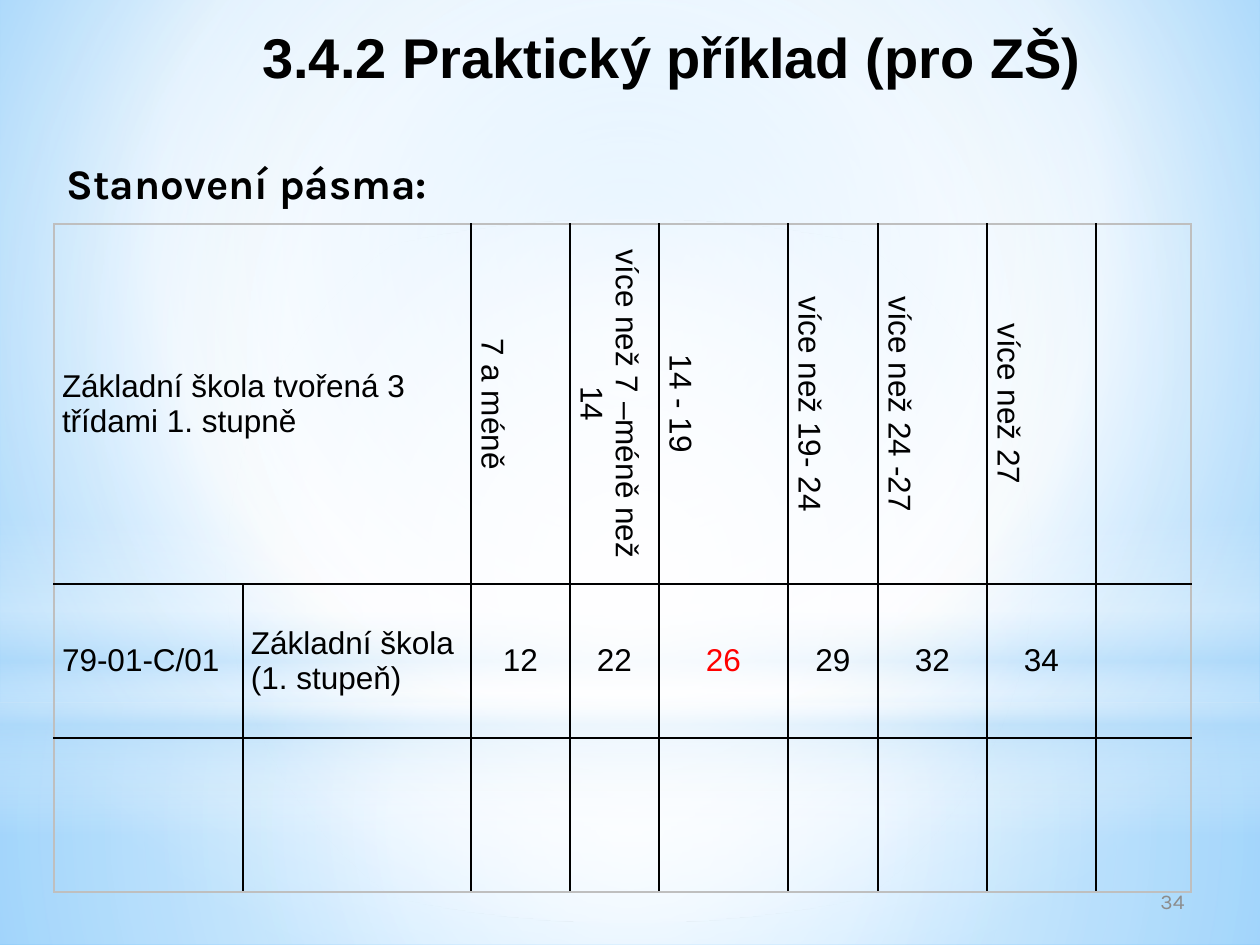
import pptx
import pptx.util
import pptx.oxml
import pptx.oxml.ns
import pptx.dml.color
import pptx.enum.shapes
import pptx.enum.text

PX = 914400 // 126
RGB = pptx.dml.color.RGBColor
BLACK = RGB(0, 0, 0)
RED = RGB(0xFF, 0, 0)
GRAY = RGB(0x8C, 0x8C, 0x8C)
EDGE = RGB(0xBF, 0xBF, 0xBF)
WHITE = RGB(0xFF, 0xFF, 0xFF)
PALE = RGB(0xB4, 0xDC, 0xFA)
SKY = RGB(0x9E, 0xD5, 0xFF)
BLUE = RGB(0x5B, 0xB9, 0xFF)
NS = pptx.oxml.ns.nsdecls("a")
ALIGN = pptx.enum.text.PP_ALIGN
ANCHOR = pptx.enum.text.MSO_ANCHOR
SHAPE = pptx.enum.shapes.MSO_SHAPE


def write(tf, text, size=18, font="Arial", color=BLACK, bold=False, align=ALIGN.LEFT):
    p = tf.paragraphs[0]
    p.alignment = align
    p.space_before = pptx.util.Pt(0)
    r = p.add_run()
    r.text = text
    r.font.size = pptx.util.Pt(size)
    r.font.name = font
    r.font.bold = bold
    r.font.color.rgb = color
    return p


def set_gradient(fill, parent, stops, center=None):
    fill.solid()
    gs = "".join(
        f'<a:gs pos="{pos * 1000}"><a:srgbClr val="{color}">'
        f'<a:alpha val="{alpha * 1000}"/></a:srgbClr></a:gs>'
        for pos, color, alpha in stops)
    shade = '<a:lin ang="5400000" scaled="0"/>'
    if center:
        rect = " ".join(f'{k}="{v * 1000}"' for k, v in zip("ltrb", center))
        shade = f'<a:path path="circle"><a:fillToRect {rect}/></a:path>'
    grad = pptx.oxml.parse_xml(
        f'<a:gradFill {NS} rotWithShape="1"><a:gsLst>{gs}</a:gsLst>{shade}</a:gradFill>')
    solid = parent.xpath(".//a:solidFill")[0]
    solid.getparent().replace(solid, grad)


prs = pptx.Presentation()
prs.slide_width = pptx.util.Inches(10)
prs.slide_height = pptx.util.Inches(7.5)
s = prs.slides.add_slide(prs.slide_layouts[1])
title, body = s.shapes.title, s.placeholders[1]

set_gradient(s.background.fill, s.element,
             [(0, SKY, 100), (60, WHITE, 100), (100, BLUE, 100)], (20, 10, 20, 60))

MIDDLE = (50, 50, 50, 50)
layers = [
    (SHAPE.RECTANGLE, 703, 242, [(0, WHITE, 91), (37, WHITE, 76), (100, PALE, 79)], MIDDLE),
    (SHAPE.RECTANGLE, 0, 703, [(0, WHITE, 89), (48, WHITE, 62), (100, PALE, 79)], MIDDLE),
    (SHAPE.RECTANGLE, 519, 315, [(0, WHITE, 0), (29, WHITE, 30), (45, PALE, 40),
                                 (55, WHITE, 26), (65, PALE, 60), (100, WHITE, 0)], None),
    (SHAPE.OVAL, 220, 703, [(0, WHITE, 100), (56, WHITE, 0)], MIDDLE),
]
for kind, top, height, stops, center in layers:
    sp = s.shapes.add_shape(kind, 0, top * PX, prs.slide_width, height * PX)
    sp.shadow.inherit = False
    sp.line.fill.background()
    set_gradient(sp.fill, sp.element, stops, center)
    title.element.addprevious(sp.element)

number = s.shapes.add_textbox(903 * PX, 876 * PX, 294 * PX, 50 * PX)
for sp, box in ((title, (105, 16, 1134, 100)), (body, (54, 151, 1150, 751))):
    sp.left, sp.top, sp.width, sp.height = (v * PX for v in box)
for sp, anchor in ((title, ANCHOR.TOP), (body, ANCHOR.TOP), (number, ANCHOR.MIDDLE)):
    sp.text_frame.word_wrap = True
    sp.text_frame.auto_size = pptx.enum.text.MSO_AUTO_SIZE.NONE
    sp.text_frame.vertical_anchor = anchor

write(title.text_frame, "3.4.2 Praktický příklad (pro ZŠ)", size=32, bold=True, align=ALIGN.CENTER)
write(number.text_frame, "34", size=12, font="Karla", color=GRAY, align=ALIGN.RIGHT)
p = write(body.text_frame, "Stanovení pásma:", size=24, font="Karla", bold=True)
pPr = p._p.get_or_add_pPr()
pPr.set("marL", "0")
pPr.set("indent", "0")
pPr.append(pptx.oxml.parse_xml(f"<a:buNone {NS}/>"))

rows = [
    ["Základní škola tvořená 3 třídami 1. stupně", "", "7 a méně", "více než 7 –méně než 14",
     "14 - 19", "více než 19- 24", "více než 24 -27", "více než 27", ""],
    ["79-01-C/01", "Základní škola (1. stupeň)", "12", "22", "26", "29", "32", "34", ""],
    [""] * 9,
]
widths = [189, 228, 99, 89, 129, 90, 109, 109, 95]
heights = [248, 154, 154]
frame = s.shapes.add_table(len(rows), len(widths), 54 * PX, 224 * PX,
                           sum(widths) * PX, sum(heights) * PX)
table = frame.table
table.first_row = False
table.horz_banding = False
for col, width in zip(table.columns, widths):
    col.width = width * PX
for row, height in zip(table.rows, heights):
    row.height = height * PX
table.cell(0, 0).merge(table.cell(0, 1))

for i, texts in enumerate(rows):
    for j, text in enumerate(texts):
        cell = table.cell(i, j)
        cell.fill.background()
        tcPr = cell._tc.get_or_add_tcPr()
        outer = (j == 0, j == len(widths) - 1, i == 0, i == len(rows) - 1)
        for k, (side, edge) in enumerate(zip("LRTB", outer)):
            tcPr.insert(k, pptx.oxml.parse_xml(
                f'<a:ln{side} {NS} w="12700"><a:solidFill>'
                f'<a:srgbClr val="{EDGE if edge else BLACK}"/></a:solidFill></a:ln{side}>'))
        if text:
            cell.vertical_anchor = ANCHOR.MIDDLE
            cell.margin_left = cell.margin_right = 8 * PX
            cell.margin_top = cell.margin_bottom = 4 * PX
            write(cell.text_frame, text, color=RED if text == "26" else BLACK,
                  align=ALIGN.CENTER if j > 1 else ALIGN.LEFT)
            if i == 0 and j > 1:
                tcPr.set("vert", "vert")

prs.save("out.pptx")
